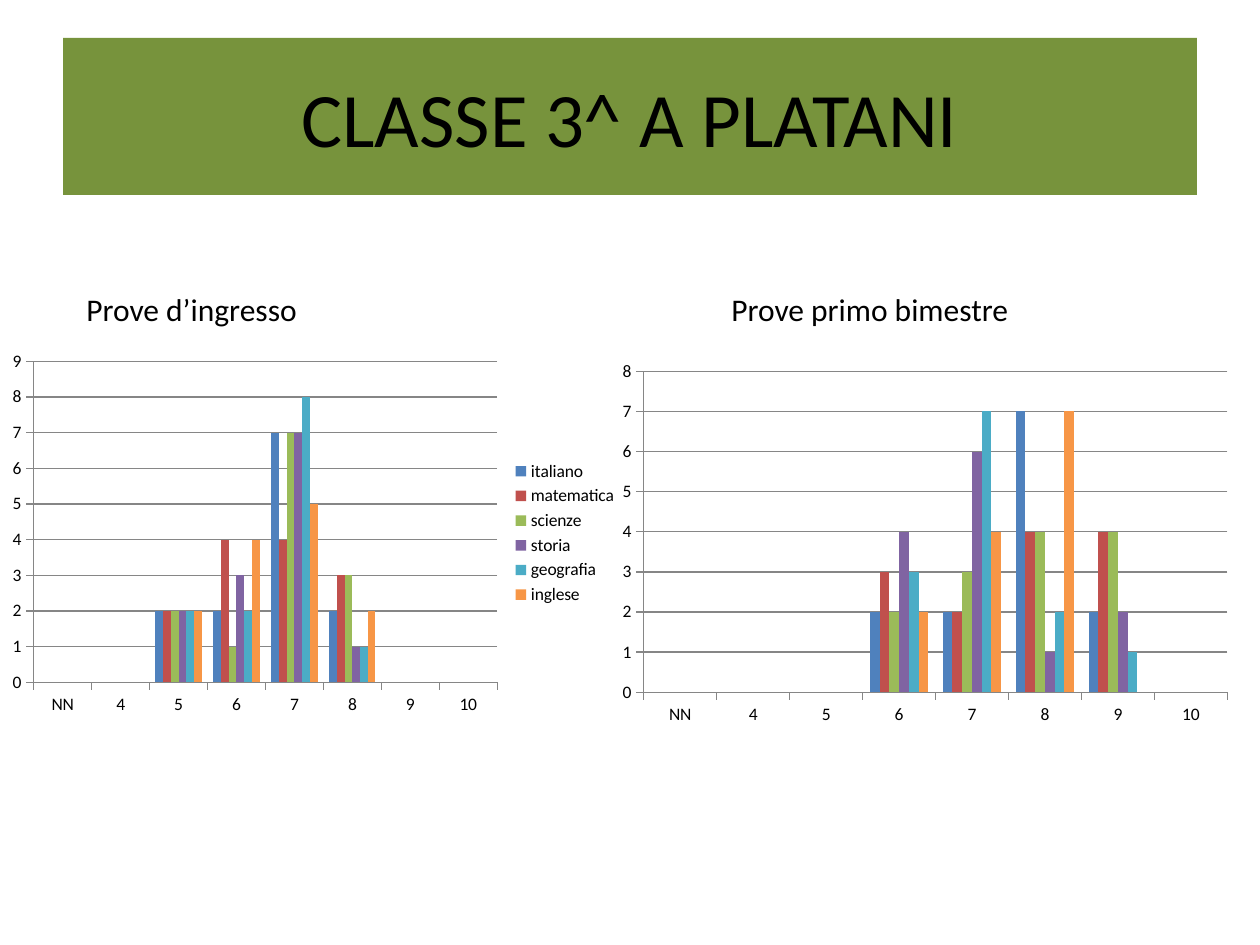
import pptx
import pptx.chart.data
import pptx.dml.color
import pptx.enum.chart
import pptx.enum.text
import pptx.util

RGB = pptx.dml.color.RGBColor
GREEN = RGB(0x77, 0x93, 0x3C)
BLACK = RGB(0, 0, 0)
GREY = RGB(0x86, 0x86, 0x86)
HUES = [RGB(0x4F, 0x81, 0xBD), RGB(0xC0, 0x50, 0x4D), RGB(0x9B, 0xBB, 0x59),
        RGB(0x80, 0x64, 0xA2), RGB(0x4B, 0xAC, 0xC6), RGB(0xF7, 0x96, 0x46)]
FONT = "Calibri"
MARKS = ["NN", "4", "5", "6", "7", "8", "9", "10"]
TOPICS = ["italiano", "matematica", "scienze", "storia", "geografia", "inglese"]
X = None


def box(*sides):
    """Turn px lengths into EMU, at 126 px to the inch."""
    return [pptx.util.Emu(round(n * 914400 / 126)) for n in sides]


def style(font, size):
    font.name = FONT
    font.size = pptx.util.Pt(size)
    font.color.rgb = BLACK


deck = pptx.Presentation()
deck.slide_width, deck.slide_height = box(1260, 945)
slide = deck.slides.add_slide(deck.slide_layouts[5])

# Title band
title = slide.shapes.title
title.left, title.top, title.width, title.height = box(63, 38, 1134, 157)
title.fill.solid()
title.fill.fore_color.rgb = GREEN
title.text_frame.text = "CLASSE 3^ A PLATANI"
title.text_frame.vertical_anchor = pptx.enum.text.MSO_ANCHOR.MIDDLE
line = title.text_frame.paragraphs[0]
line.alignment = pptx.enum.text.PP_ALIGN.CENTER
style(line.runs[0].font, 44)

# Each test: caption, caption place, chart place, legend, one row per topic
TESTS = [
    ("Prove d’ingresso", (74, 284, 238, 50), (0, 344, 630, 378), True,
     [[X, X, 2, 2, 7, 2, X, X],
      [X, X, 2, 4, 4, 3, X, X],
      [X, X, 2, 1, 7, 3, X, X],
      [X, X, 2, 3, 7, 1, X, X],
      [X, X, 2, 2, 8, 1, X, X],
      [X, X, 2, 4, 5, 2, X, X]]),
    ("Prove primo bimestre", (719, 284, 305, 50), (610, 354, 630, 378), False,
     [[X, X, X, 2, 2, 7, 2, X],
      [X, X, X, 3, 2, 4, 4, X],
      [X, X, X, 2, 3, 4, 4, X],
      [X, X, X, 4, 6, 1, 2, X],
      [X, X, X, 3, 7, 2, 1, X],
      [X, X, X, 2, 4, 7, X, X]]),
]

for label, spot, place, legend, rows in TESTS:
    data = pptx.chart.data.CategoryChartData()
    data.categories = MARKS
    for topic, row in zip(TOPICS, rows):
        data.add_series(topic, row)
    kind = pptx.enum.chart.XL_CHART_TYPE.COLUMN_CLUSTERED
    chart = slide.shapes.add_chart(kind, *box(*place), data).chart
    style(chart.font, 10)
    chart.has_title = False
    chart.has_legend = legend
    if legend:
        chart.legend.position = pptx.enum.chart.XL_LEGEND_POSITION.RIGHT
        chart.legend.include_in_layout = False

    plot = chart.plots[0]
    plot.vary_by_categories = False
    plot.gap_width = 150
    for bar, hue in zip(plot.series, HUES):
        bar.format.fill.solid()
        bar.format.fill.fore_color.rgb = hue

    scale = chart.value_axis
    scale.minimum_scale = 0
    scale.major_unit = 1
    scale.has_major_gridlines = True
    for axis in (chart.category_axis, scale):
        axis.major_tick_mark = pptx.enum.chart.XL_TICK_MARK.OUTSIDE
        axis.format.line.color.rgb = GREY
    scale.major_gridlines.format.line.color.rgb = GREY

    frame = slide.shapes.add_textbox(*box(*spot)).text_frame
    frame.word_wrap = False
    frame.auto_size = pptx.enum.text.MSO_AUTO_SIZE.SHAPE_TO_FIT_TEXT
    frame.text = label
    style(frame.paragraphs[0].runs[0].font, 18)

deck.save("out.pptx")
